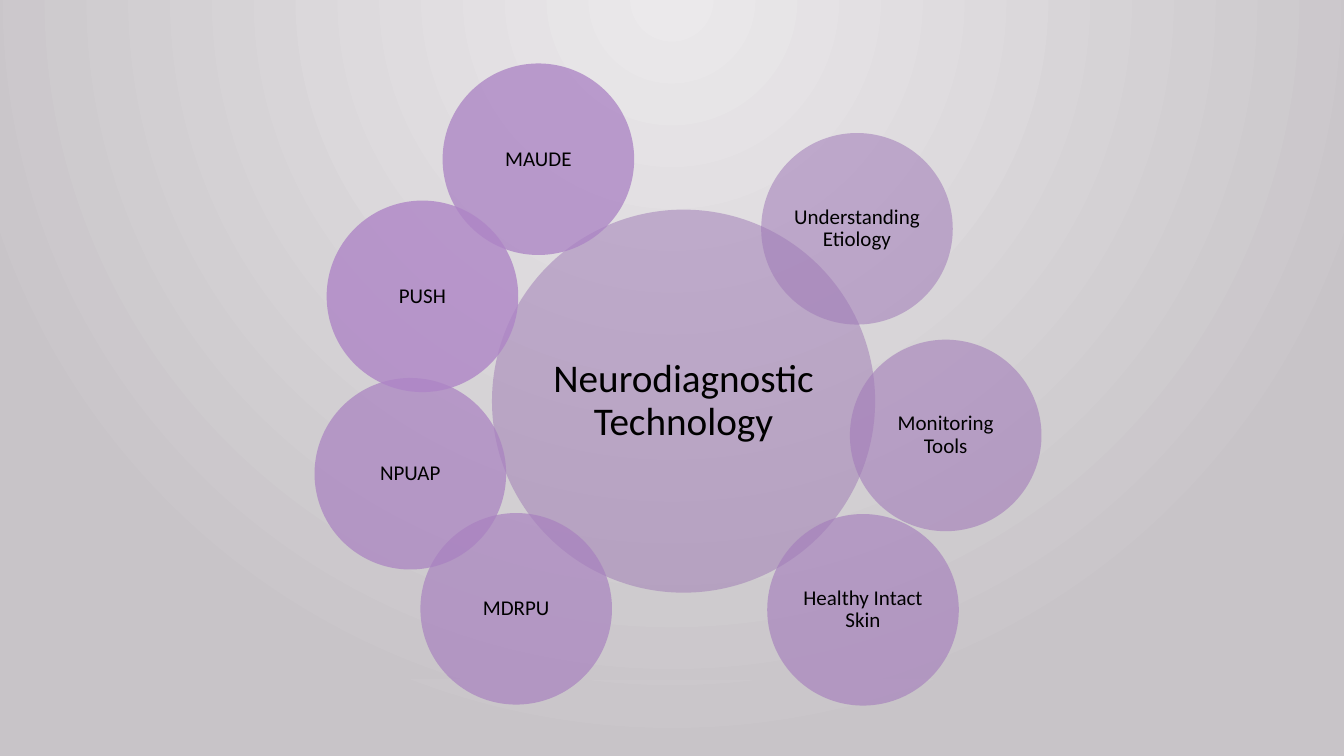
from lxml.etree import SubElement
from pptx import Presentation
from pptx.dml.color import RGBColor
from pptx.enum.shapes import MSO_SHAPE
from pptx.enum.text import MSO_ANCHOR, PP_ALIGN
from pptx.oxml.ns import qn
from pptx.util import Inches, Pt

COLORS = {
    "glow": "EBE9EB",
    "edge": "C8C4C8",
    "text": "000000",
    "Neurodiagnostic Technology": "9D78B4",
    "Understanding Etiology": "9F79B7",
    "Monitoring Tools": "A27BB9",
    "Healthy Intact Skin": "A47DBC",
    "MDRPU": "A77FBF",
    "NPUAP": "A981C1",
    "MAUDE": "AB83C4",
    "PUSH": "AE85C6",
}
HUB = {"diameter": 3.8, "size": 28, "margin": 0.04}
SATELLITE = {"diameter": 1.9, "size": 15, "margin": 0.02}
TOPICS = [
    ("Neurodiagnostic Technology", 1.76, 1.45, HUB),
    ("Understanding Etiology", 4.43, 0.69, SATELLITE),
    ("Monitoring Tools", 5.31, 2.74, SATELLITE),
    ("Healthy Intact Skin", 4.49, 4.47, SATELLITE),
    ("MDRPU", 1.05, 4.46, SATELLITE),
    ("NPUAP", 0, 3.12, SATELLITE),
    ("MAUDE", 1.27, 0, SATELLITE),
    ("PUSH", 0.12, 1.36, SATELLITE),
]
OPACITY_FIRST, OPACITY_LAST = 50, 80


def set_format(target, values):
    """Set each attribute of the target from a dict."""
    for attribute, value in values.items():
        setattr(target, attribute, value)


def fill_with_glow(fill, element):
    """Fill with a circular gradient centred on the top edge."""
    fill.gradient()
    for stop, name, position in zip(fill.gradient_stops, ("glow", "edge"), (0, 1)):
        stop.color.rgb = RGBColor.from_string(COLORS[name])
        stop.position = position
    gradient = element.find(".//" + qn("a:gradFill"))
    gradient.remove(gradient.find(qn("a:lin")))
    circle = SubElement(gradient, qn("a:path"), path="circle")
    SubElement(circle, qn("a:fillToRect"), l="43000", t="0", r="43000", b="100000")


def add_backdrop(slide, left, top, width, height):
    """Draw the gradient background and the panel over it."""
    fill_with_glow(slide.background.fill, slide._element)
    panel = slide.shapes.add_shape(
        MSO_SHAPE.RECTANGLE, Inches(left), Inches(top), Inches(width), Inches(height))
    panel.shadow.inherit = False
    panel.line.fill.background()
    fill_with_glow(panel.fill, panel._element)


def add_topic(shapes, label, left, top, style, opacity):
    """Draw one translucent circle with its centred label."""
    diameter = Inches(style["diameter"])
    circle = shapes.add_shape(
        MSO_SHAPE.OVAL, Inches(left), Inches(top), diameter, diameter)
    circle.shadow.inherit = False
    circle.line.fill.background()
    circle.fill.solid()
    circle.fill.fore_color.rgb = RGBColor.from_string(COLORS[label])
    tint = circle._element.spPr.find(".//" + qn("a:srgbClr"))
    SubElement(tint, qn("a:alpha"), val=str(opacity * 1000))

    frame = circle.text_frame
    margin = Inches(style["margin"])
    sides = ("left", "top", "right", "bottom")
    set_format(frame, {f"margin_{side}": margin for side in sides})
    set_format(frame, {"word_wrap": True, "vertical_anchor": MSO_ANCHOR.MIDDLE})
    paragraph = frame.paragraphs[0]
    set_format(paragraph, {"alignment": PP_ALIGN.CENTER, "line_spacing": 0.9})
    run = paragraph.add_run()
    run.text = label
    set_format(run.font, {"name": "Calibri", "size": Pt(style["size"])})
    run.font.color.rgb = RGBColor.from_string(COLORS["text"])


def add_topic_cluster(slide, left, top):
    """Draw the hub and its satellites, each more opaque than the last."""
    cluster = slide.shapes.add_group_shape()
    step = (OPACITY_LAST - OPACITY_FIRST) / (len(TOPICS) - 1)
    for index, (label, across, down, style) in enumerate(TOPICS):
        opacity = round(OPACITY_FIRST + index * step)
        add_topic(cluster.shapes, label, left + across, top + down, style, opacity)


def main():
    """Build and save the slide."""
    presentation = Presentation()
    set_format(presentation, {"slide_width": Inches(13.33), "slide_height": Inches(7.5)})
    slide = presentation.slides.add_slide(presentation.slide_layouts[6])
    add_backdrop(slide, 0, 0, 13.33, 6.74)
    add_topic_cluster(slide, 3.12, 0.63)
    presentation.save("out.pptx")


if __name__ == "__main__":
    main()
